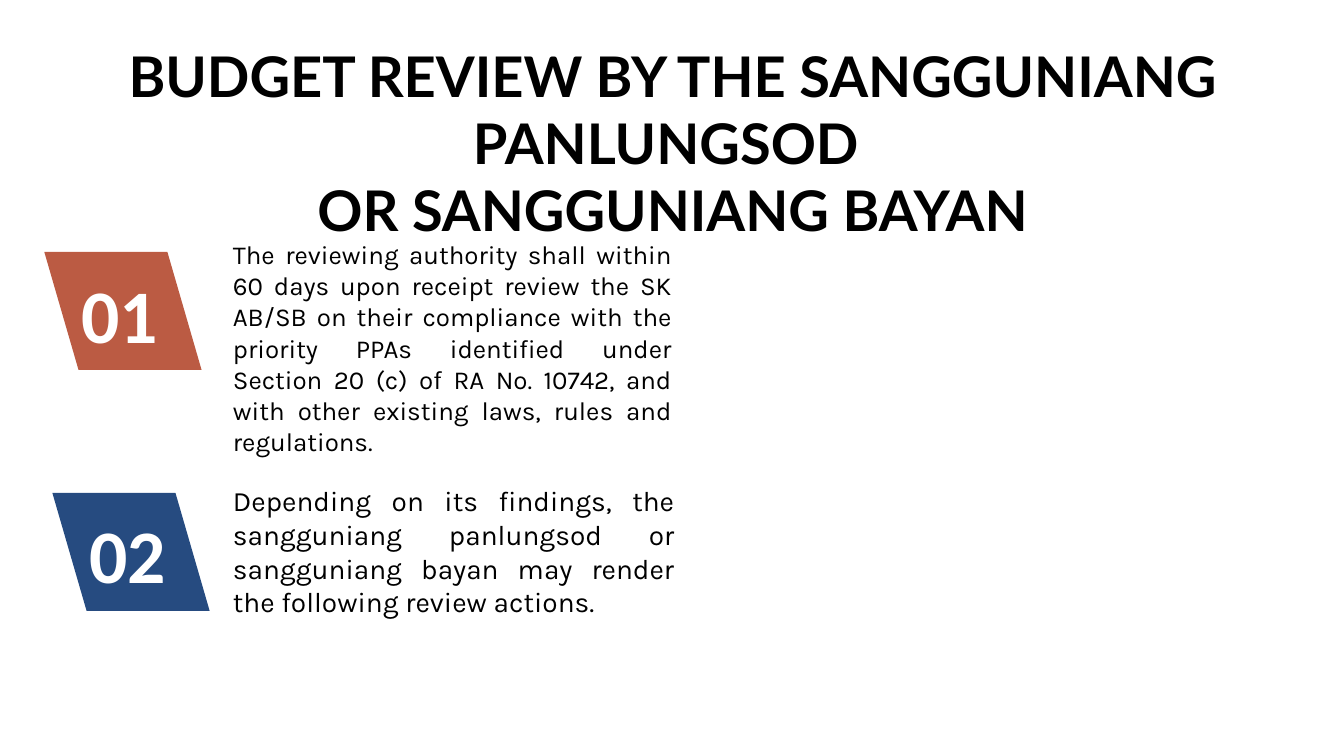
from dataclasses import dataclass

from pptx import Presentation
from pptx.dml.color import RGBColor
from pptx.enum.shapes import MSO_SHAPE
from pptx.enum.text import MSO_ANCHOR, MSO_AUTO_SIZE, PP_ALIGN
from pptx.slide import Slide
from pptx.text.text import TextFrame
from pptx.util import Inches, Pt

COLORS = {"rust": "BB5B43", "navy": "264B80", "white": "FFFFFF", "black": "000000"}


@dataclass(frozen=True)
class ReviewStep:
    number: str
    color: str
    badge_left: float
    badge_top: float
    text: str
    text_top: float
    text_width: float
    text_height: float
    text_size: float


REVIEW_STEPS = [
    ReviewStep(
        "01", "rust", 0.44, 2.5,
        "The reviewing authority shall within 60 days upon receipt review the SK AB/SB "
        "on their compliance with the priority PPAs identified under Section 20 (c) of "
        "RA No. 10742, and with other existing laws, rules and regulations.",
        2.32, 4.35, 1.66, 18.5,
    ),
    ReviewStep(
        "02", "navy", 0.52, 4.89,
        "Depending on its findings, the sangguniang panlungsod or sangguniang bayan "
        "may render the following review actions.",
        4.75, 4.38, 1.45, 20,
    ),
]


def write_text(
    frame: TextFrame,
    text: str,
    *,
    font: str,
    size: float,
    color: str = "black",
    bold: bool = False,
    align: PP_ALIGN = PP_ALIGN.LEFT,
    anchor: MSO_ANCHOR = MSO_ANCHOR.TOP,
    margins: tuple[float, float, float, float] = (0, 0.05, 0, 0.05),
    fit: MSO_AUTO_SIZE = MSO_AUTO_SIZE.NONE,
) -> None:
    frame.word_wrap = True
    frame.auto_size = fit
    frame.vertical_anchor = anchor
    frame.margin_left, frame.margin_top, frame.margin_right, frame.margin_bottom = map(
        Inches, margins
    )
    frame.text = text
    for paragraph in frame.paragraphs:
        paragraph.alignment = align
        paragraph.font.name = font
        paragraph.font.size = Pt(size)
        paragraph.font.bold = bold
        paragraph.font.color.rgb = RGBColor.from_string(COLORS[color])


def add_title(slide: Slide) -> None:
    title = slide.shapes.title
    title.left, title.top = Inches(0.17), Inches(0.73)
    title.width, title.height = Inches(13), Inches(1.36)
    write_text(
        title.text_frame,
        "BUDGET REVIEW BY THE SANGGUNIANG PANLUNGSOD \nOR SANGGUNIANG BAYAN",
        font="Lato", size=40, bold=True, align=PP_ALIGN.CENTER,
        anchor=MSO_ANCHOR.MIDDLE, margins=(0.07, 0.04, 0.07, 0.04),
    )


def add_step(slide: Slide, step: ReviewStep) -> None:
    badge = slide.shapes.add_shape(
        MSO_SHAPE.PARALLELOGRAM,
        Inches(step.badge_left), Inches(step.badge_top), Inches(1.56), Inches(1.17),
    )
    badge.adjustments[0] = 0.29
    badge.element.spPr.xfrm.set("flipH", "1")
    badge.shadow.inherit = False
    badge.fill.solid()
    badge.fill.fore_color.rgb = RGBColor.from_string(COLORS[step.color])
    badge.line.fill.background()
    write_text(
        badge.text_frame, step.number, font="Calibri", size=54, color="white",
        bold=True, anchor=MSO_ANCHOR.BOTTOM, margins=(0.1, 0.85, 0.1, 0.05),
    )
    description = slide.shapes.add_textbox(
        Inches(2.31), Inches(step.text_top),
        Inches(step.text_width), Inches(step.text_height),
    )
    write_text(
        description.text_frame, step.text, font="Karla", size=step.text_size,
        align=PP_ALIGN.JUSTIFY, fit=MSO_AUTO_SIZE.SHAPE_TO_FIT_TEXT,
    )


def main() -> None:
    presentation = Presentation()
    presentation.slide_width = Inches(13.33)
    presentation.slide_height = Inches(7.5)
    slide = presentation.slides.add_slide(presentation.slide_layouts[5])
    add_title(slide)
    for step in REVIEW_STEPS:
        add_step(slide, step)
    presentation.save("out.pptx")


if __name__ == "__main__":
    main()
